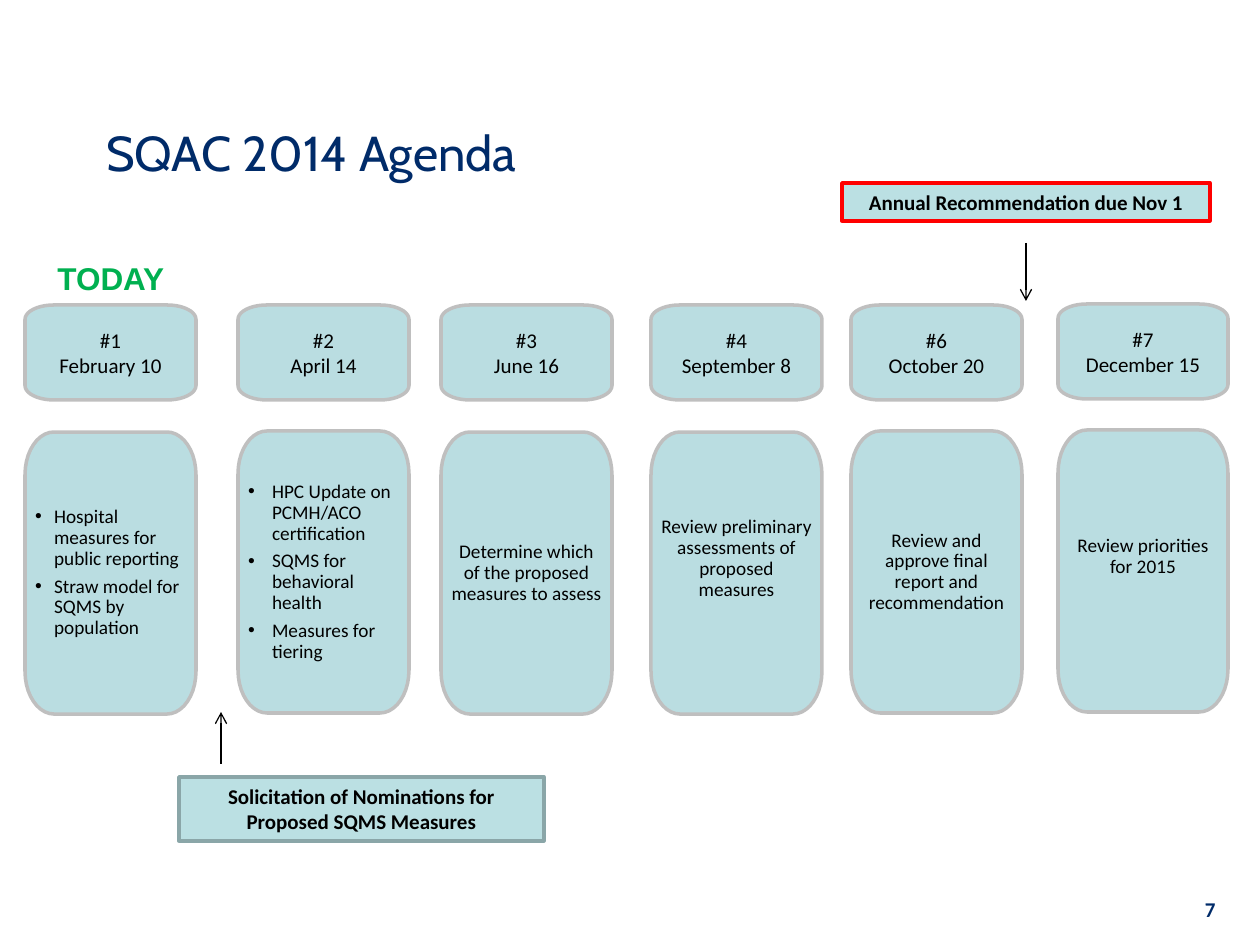
import math
from dataclasses import dataclass

from lxml import etree
from pptx import Presentation
from pptx.dml.color import RGBColor
from pptx.enum.shapes import MSO_CONNECTOR, MSO_SHAPE
from pptx.enum.text import MSO_ANCHOR, PP_ALIGN
from pptx.oxml.ns import qn
from pptx.util import Emu, Pt

MIDDLE, TOP = MSO_ANCHOR.MIDDLE, MSO_ANCHOR.TOP
LEFT, CENTER, RIGHT = PP_ALIGN.LEFT, PP_ALIGN.CENTER, PP_ALIGN.RIGHT
RECTANGLE, STRAIGHT = MSO_SHAPE.RECTANGLE, MSO_CONNECTOR.STRAIGHT

PX_PER_INCH = 126
CARD_FILL, CALLOUT_FILL = "BADDE1", "BBE0E3"
GRAY, BLACK, NAVY, GREEN, RED, TEAL = (
    "BFBFBF", "000000", "002B69", "00B050", "FF0000", "8AA6A8")
HEADER_HEIGHT, BODY_HEIGHT, INSET = 95, 282, 10
CORNER_WIDTH, CORNER_STEPS = 29, 10


@dataclass
class Meeting:
    left: int
    header_top: int
    body_top: int
    number: str
    date: str
    topics: list[str]
    bullet_indent: int = 0
    lift: int = 0
    width: int = 171


@dataclass
class Callout:
    left: int
    top: int
    width: int
    height: int
    text: str
    border: str


@dataclass
class Arrow:
    x: int
    start: int
    end: int


@dataclass
class Label:
    left: int
    top: int
    width: int
    height: int
    text: str
    font: str
    size: int
    color: str
    bold: bool = False
    align: PP_ALIGN = LEFT
    anchor: MSO_ANCHOR = MIDDLE
    wrap: bool = True


MEETINGS = [
    Meeting(25, 305, 432, "#1", "February 10",
            ["Hospital measures for public reporting",
             "Straw model for SQMS by population"], bullet_indent=19),
    Meeting(238, 305, 431, "#2", "April 14",
            ["HPC Update on PCMH/ACO certification",
             "SQMS for behavioral health", "Measures for tiering"],
            bullet_indent=24),
    Meeting(441, 305, 432, "#3", "June 16",
            ["Determine which of the proposed measures to assess"]),
    Meeting(651, 305, 432, "#4", "September 8",
            ["Review preliminary assessments of proposed measures"], lift=29),
    Meeting(851, 305, 431, "#6", "October 20",
            ["Review and approve final report and recommendation"]),
    Meeting(1058, 304, 430, "#7", "December 15",
            ["Review priorities for 2015"], lift=29, width=170),
]
CALLOUTS = [
    Callout(842, 183, 368, 38, "Annual Recommendation due Nov 1", RED),
    Callout(179, 777, 365, 64,
            "Solicitation of Nominations for Proposed SQMS Measures", TEAL),
]
ARROWS = [Arrow(1026, 243, 301), Arrow(221, 764, 712)]
LABELS = [
    Label(94, 84, 1071, 136, "SQAC 2014 Agenda", "Cabin", 28, NAVY),
    Label(45, 253, 132, 50, "TODAY", "Arial", 18, GREEN, bold=True,
          anchor=TOP, wrap=False),
    Label(966, 892, 262, 34, "7", "Calibri", 12, NAVY, bold=True, align=RIGHT),
]


def px(value: float) -> Emu:
    return Emu(round(value * 914400 / PX_PER_INCH))


def color(value: str) -> RGBColor:
    return RGBColor.from_string(value)


def paint(shape, fill: str, border: str) -> None:
    shape.shadow.inherit = False
    shape.fill.solid()
    shape.fill.fore_color.rgb = color(fill)
    shape.line.color.rgb = color(border)
    shape.line.width = Pt(2)


def write(shape, lines: list[str], size: int, align: PP_ALIGN = CENTER,
          font: str = "Calibri", text_color: str = BLACK, bold: bool = False,
          bullet_indent: int = 0, line_spacing: float = 1.0,
          gap: int = 0) -> None:
    frame = shape.text_frame
    frame.word_wrap = True
    frame.vertical_anchor = MIDDLE
    for index, line in enumerate(lines):
        paragraph = frame.add_paragraph() if index else frame.paragraphs[0]
        paragraph.text = line
        if bullet_indent:
            add_bullet(paragraph, bullet_indent)
        paragraph.alignment = align
        paragraph.line_spacing = line_spacing
        if index:
            paragraph.space_before = Pt(gap)
        paragraph.font.name = font
        paragraph.font.size = Pt(size)
        paragraph.font.bold = bold
        paragraph.font.color.rgb = color(text_color)


def add_bullet(paragraph, indent: int) -> None:
    properties = paragraph._p.get_or_add_pPr()
    properties.set("marL", str(px(indent)))
    properties.set("indent", str(-px(indent)))
    etree.SubElement(properties, qn("a:buFont")).set("typeface", "Arial")
    etree.SubElement(properties, qn("a:buChar")).set("char", "•")


def add_card(slide, left: int, top: int, width: int, height: int):
    """Add a box whose elliptical corners stretch with its height."""
    radius_x, radius_y = CORNER_WIDTH, height * 0.152
    near_x, far_x = left + radius_x, left + width - radius_x
    near_y, far_y = top + radius_y, top + height - radius_y
    centers = [(far_x, far_y), (near_x, far_y), (near_x, near_y), (far_x, near_y)]
    points = []
    for quarter, (center_x, center_y) in enumerate(centers):
        for step in range(CORNER_STEPS + 1):
            angle = (quarter + step / CORNER_STEPS) * math.pi / 2
            points.append((px(center_x + radius_x * math.cos(angle)),
                           px(center_y + radius_y * math.sin(angle))))
    builder = slide.shapes.build_freeform(*points[0])
    builder.add_line_segments(points[1:], close=True)
    card = builder.convert_to_shape()
    paint(card, CARD_FILL, GRAY)
    frame = card.text_frame
    frame.margin_left = frame.margin_right = px(INSET)
    frame.margin_top = frame.margin_bottom = px(INSET)
    return card


def add_meeting(slide, meeting: Meeting) -> None:
    header = add_card(slide, meeting.left, meeting.header_top,
                      meeting.width, HEADER_HEIGHT)
    write(header, [meeting.number, meeting.date], 12)
    body = add_card(slide, meeting.left, meeting.body_top,
                    meeting.width, BODY_HEIGHT)
    body.text_frame.margin_bottom = px(INSET + meeting.lift)
    write(body, meeting.topics, 11, LEFT if meeting.bullet_indent else CENTER,
          bullet_indent=meeting.bullet_indent, line_spacing=0.9, gap=4)


def add_callout(slide, callout: Callout) -> None:
    shape = slide.shapes.add_shape(RECTANGLE, px(callout.left), px(callout.top),
                                   px(callout.width), px(callout.height))
    paint(shape, CALLOUT_FILL, callout.border)
    write(shape, [callout.text], 12, bold=True)


def add_arrow(slide, arrow: Arrow) -> None:
    connector = slide.shapes.add_connector(
        STRAIGHT, px(arrow.x), px(arrow.start), px(arrow.x), px(arrow.end))
    connector.line.color.rgb = color(BLACK)
    connector.line.width = Pt(0.75)
    line = connector.line._get_or_add_ln()
    etree.SubElement(line, qn("a:tailEnd")).set("type", "arrow")
    etree.SubElement(connector._element.spPr, qn("a:effectLst"))


def add_label(slide, label: Label) -> None:
    box = slide.shapes.add_textbox(px(label.left), px(label.top),
                                   px(label.width), px(label.height))
    write(box, [label.text], label.size, label.align, label.font,
          label.color, label.bold)
    box.text_frame.vertical_anchor = label.anchor
    box.text_frame.word_wrap = label.wrap


def main() -> None:
    presentation = Presentation()
    presentation.slide_width, presentation.slide_height = px(1260), px(945)
    slide = presentation.slides.add_slide(presentation.slide_layouts[6])
    for meeting in MEETINGS:
        add_meeting(slide, meeting)
    for callout in CALLOUTS:
        add_callout(slide, callout)
    for arrow in ARROWS:
        add_arrow(slide, arrow)
    for label in LABELS:
        add_label(slide, label)
    presentation.save("out.pptx")


if __name__ == "__main__":
    main()
